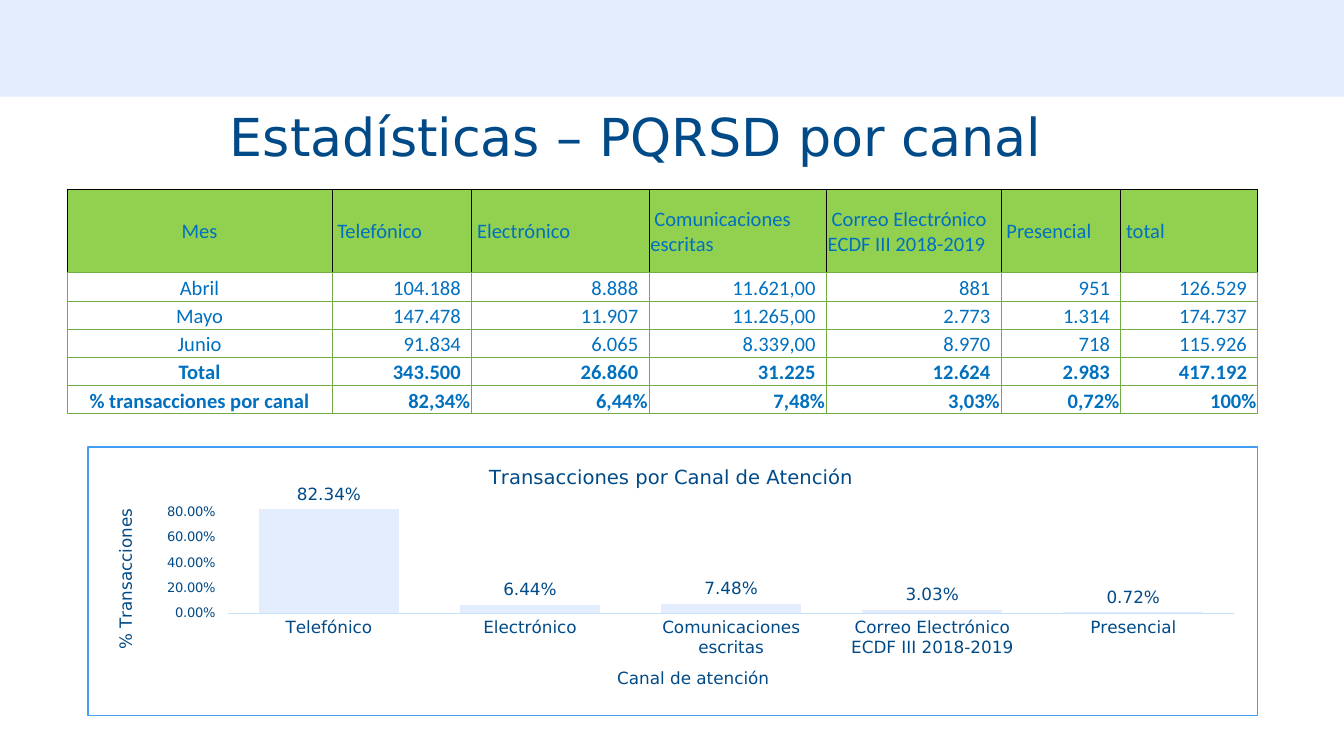
from lxml import etree
from pptx import Presentation
from pptx.chart.data import CategoryChartData
from pptx.dml.color import RGBColor
from pptx.enum.chart import XL_CHART_TYPE, XL_LABEL_POSITION, XL_TICK_MARK
from pptx.enum.shapes import MSO_SHAPE
from pptx.enum.text import MSO_ANCHOR, MSO_AUTO_SIZE, PP_ALIGN
from pptx.oxml import parse_xml
from pptx.oxml.ns import nsdecls, qn
from pptx.util import Inches, Pt

COLUMN = XL_CHART_TYPE.COLUMN_CLUSTERED
ABOVE = XL_LABEL_POSITION.OUTSIDE_END
NO_TICK, OUT_TICK = XL_TICK_MARK.NONE, XL_TICK_MARK.OUTSIDE
RECT = MSO_SHAPE.RECTANGLE
MIDDLE, BOTTOM = MSO_ANCHOR.MIDDLE, MSO_ANCHOR.BOTTOM
LEFT, CENTER, RIGHT = PP_ALIGN.LEFT, PP_ALIGN.CENTER, PP_ALIGN.RIGHT
NO_FIT = MSO_AUTO_SIZE.NONE

PALE = RGBColor(0xE4, 0xED, 0xFE)
NAVY = RGBColor(0x00, 0x4A, 0x87)
BLUE = RGBColor(0x00, 0x70, 0xC0)
LIME = RGBColor(0x92, 0xD0, 0x50)
GREEN = RGBColor(0x70, 0xAD, 0x47)
BLACK = RGBColor(0, 0, 0)
WHITE = RGBColor(0xFF, 0xFF, 0xFF)
SKY = RGBColor(0xC6, 0xE2, 0xFB)
FRAME = RGBColor(0x42, 0x9E, 0xF2)
SANS, BODY = "DejaVu Sans", "Calibri"

TITLE = "Estadísticas – PQRSD por canal"
CHANNELS = ["Telefónico", "Electrónico", "Comunicaciones escritas",
            "Correo Electrónico ECDF III 2018-2019", "Presencial"]
SHARES = [0.8234, 0.0644, 0.0748, 0.0303, 0.0072]
ROWS = [
    ["Mes", *CHANNELS, "total"],
    ["Abril", "104.188", "8.888", "11.621,00", "881", "951", "126.529"],
    ["Mayo", "147.478", "11.907", "11.265,00", "2.773", "1.314", "174.737"],
    ["Junio", "91.834", "6.065", "8.339,00", "8.970", "718", "115.926"],
    ["Total", "343.500", "26.860", "31.225", "12.624", "2.983", "417.192"],
    ["% transacciones por canal", "82,34%", "6,44%", "7,48%", "3,03%", "0,72%", "100%"],
]
WIDTHS = [1.97, 1.04, 1.32, 1.32, 1.3, 0.89, 1.02]
HEIGHTS = [0.62] + [0.21] * 5
CHART_TITLE = "Transacciones por Canal de Atención"
CAT_TITLE, VAL_TITLE = "Canal de atención", "% Transacciones"
PERCENT = "0.00%"


def box(left, top, width, height):
    """Turn inches into slide lengths."""
    return [Inches(n) for n in (left, top, width, height)]


def style(font, size, color, name, bold=False):
    """Set the look of a font."""
    font.size, font.name, font.bold = Pt(size), name, bold
    font.color.rgb = color


def edge(cell, sides):
    """Draw the borders of a cell."""
    props = cell._tc.get_or_add_tcPr()
    for side, color in sides.items():
        props.append(parse_xml(
            f'<a:ln{side} {nsdecls("a")} w="{Pt(0.5)}"><a:solidFill>'
            f'<a:srgbClr val="{color}"/></a:solidFill></a:ln{side}>'))


def place(parent, index, **shares):
    """Fix a chart part at shares of the chart size."""
    for old in parent.findall(qn("c:layout")):
        parent.remove(old)
    layout = etree.Element(qn("c:layout"))
    manual = etree.SubElement(layout, qn("c:manualLayout"))
    if "w" in shares:
        etree.SubElement(manual, qn("c:layoutTarget")).set("val", "inner")
    for key in "xy":
        etree.SubElement(manual, qn(f"c:{key}Mode")).set("val", "edge")
    for key, share in shares.items():
        etree.SubElement(manual, qn(f"c:{key}")).set("val", str(share))
    parent.insert(index, layout)


def label(title, text, size, x, y):
    """Write and place a chart or axis title."""
    para = title.text_frame.paragraphs[0]
    para.text = text
    style(para.font, size, NAVY, SANS)
    place(title._element, 1, x=x, y=y)


def add_grid(slide):
    """Build the table of months and channels."""
    shape = slide.shapes.add_table(len(ROWS), len(WIDTHS),
                                   *box(0.5, 1.41, sum(WIDTHS), sum(HEIGHTS)))
    grid = shape.table
    grid.first_row = grid.horz_banding = False
    for col, width in zip(grid.columns, WIDTHS):
        col.width = Inches(width)
    for r, (row, height) in enumerate(zip(ROWS, HEIGHTS)):
        grid.rows[r].height = Inches(height)
        head, last = r == 0, r == len(ROWS) - 1
        for c, text in enumerate(row):
            cell = grid.cell(r, c)
            cell.text = text
            cell.margin_left = cell.margin_top = Inches(0.01)
            cell.margin_right = Inches(0.01 if head or last or c == 0 else 0.08)
            cell.margin_bottom = 0
            cell.vertical_anchor = MIDDLE if head else BOTTOM
            para = cell.text_frame.paragraphs[0]
            para.alignment = CENTER if c == 0 else LEFT if head else RIGHT
            if head and c:
                para._p.get_or_add_pPr().set("indent", str(Inches(0.03)))
            style(para.font, 11, BLUE, BODY, r >= 4)
            side = BLACK if head else GREEN
            edge(cell, {"L": side, "R": side, "T": side, "B": GREEN})
            if head:
                cell.fill.solid()
                cell.fill.fore_color.rgb = LIME
            else:
                cell.fill.background()


def add_bars(slide):
    """Build the chart of shares by channel."""
    data = CategoryChartData(number_format=PERCENT)
    data.categories = CHANNELS
    data.add_series("Series 1", SHARES)
    chart = slide.shapes.add_chart(COLUMN, *box(0.65, 3.32, 8.71, 2.01), data).chart
    style(chart.font, 9, NAVY, SANS)
    chart.has_legend = False
    label(chart.chart_title, CHART_TITLE, 10.5, 0.34, 0.05)

    cat, val = chart.category_axis, chart.value_axis
    label(cat.axis_title, CAT_TITLE, 9, 0.45, 0.81)
    label(val.axis_title, VAL_TITLE, 9, 0.02, 0.22)
    turn = val.axis_title.text_frame._txBody.bodyPr
    turn.set("rot", "-5400000")
    turn.set("vert", "horz")
    cat.major_tick_mark, val.major_tick_mark = NO_TICK, OUT_TICK
    cat.format.line.color.rgb = SKY
    cat.format.line.width = Pt(0.75)
    val.format.line.fill.background()
    val.has_major_gridlines = False
    val.minimum_scale, val.maximum_scale, val.major_unit = 0, 0.83, 0.2
    style(cat.tick_labels.font, 9, NAVY, SANS)
    style(val.tick_labels.font, 7, NAVY, SANS)
    val.tick_labels.number_format = PERCENT
    val.tick_labels.number_format_is_linked = False

    plot = chart.plots[0]
    plot.gap_width, plot.vary_by_categories = 44, False
    bars = plot.series[0]
    bars.format.fill.solid()
    bars.format.fill.fore_color.rgb = PALE
    tags = bars.data_labels
    tags.show_value, tags.position = True, ABOVE
    tags.number_format, tags.number_format_is_linked = PERCENT, False
    style(tags.font, 9, NAVY, SANS)

    root = chart._chartSpace.find(qn("c:chart"))
    place(root.find(qn("c:plotArea")), 0, x=0.12, y=0.23, w=0.86, h=0.39)
    root.addnext(parse_xml(
        f'<c:spPr {nsdecls("c", "a")}><a:solidFill><a:srgbClr val="{WHITE}"/></a:solidFill>'
        f'<a:ln w="{Pt(0.75)}"><a:solidFill><a:srgbClr val="{FRAME}"/></a:solidFill></a:ln>'
        '</c:spPr>'))


def main():
    """Build the slide of requests by channel."""
    deck = Presentation()
    deck.slide_width = Inches(10)
    deck.slide_height = deck.slide_width * 9 // 16
    slide = deck.slides.add_slide(deck.slide_layouts[5])
    band = slide.shapes.add_shape(RECT, *box(0, 0, 10, 0.72))
    band.shadow.inherit = False
    band.fill.solid()
    band.fill.fore_color.rgb = PALE
    band.line.fill.background()

    title = slide.shapes.title
    title.left, title.top, title.width, title.height = box(0.23, 0.77, 9, 0.54)
    frame = title.text_frame
    frame.text = TITLE
    frame.auto_size, frame.vertical_anchor = NO_FIT, MIDDLE
    frame.margin_left = frame.margin_right = Inches(0.07)
    frame.margin_top = frame.margin_bottom = Inches(0.04)
    para = frame.paragraphs[0]
    para.alignment, para.line_spacing = CENTER, 0.9
    style(para.font, 28, NAVY, SANS)

    add_grid(slide)
    add_bars(slide)
    deck.save("out.pptx")


if __name__ == "__main__":
    main()
